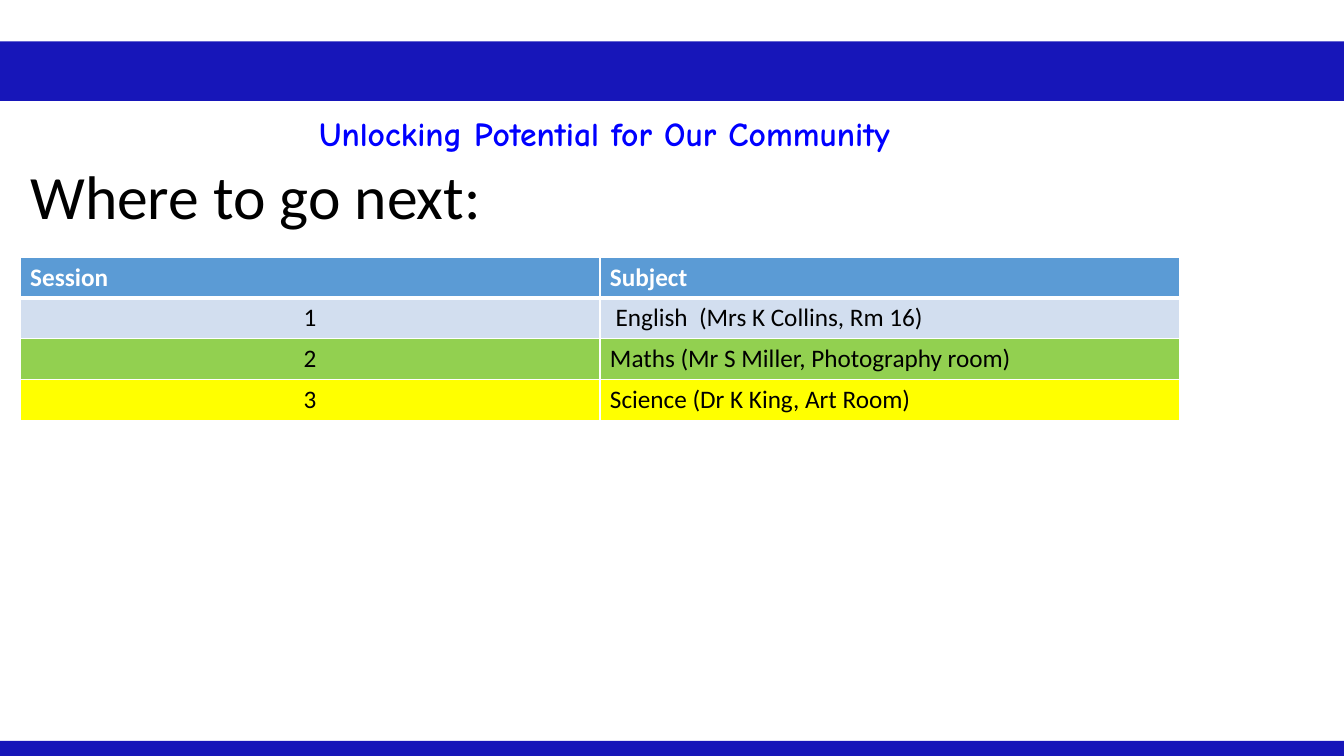
from dataclasses import dataclass

import pptx
import pptx.dml.color
import pptx.enum.shapes
import pptx.enum.text
import pptx.oxml
import pptx.oxml.ns
import pptx.util

Inches = pptx.util.Inches
Pt = pptx.util.Pt
ALIGN = pptx.enum.text.PP_ALIGN
ANCHOR = pptx.enum.text.MSO_ANCHOR
NAVY, WHITE, BLACK = "1716B9", "FFFFFF", "000000"


@dataclass
class Band:
    left: float
    top: float
    width: float
    height: float
    fill: str


@dataclass
class Row:
    session: str
    subject: str
    fill: str
    color: str = BLACK
    head: bool = False


def paint(target, color: str) -> None:
    """Give a fill a solid colour."""
    target.solid()
    target.fore_color.rgb = pptx.dml.color.RGBColor.from_string(color)


def style(target, values: dict) -> None:
    for name, value in values.items():
        setattr(target, name, value)


def write(frame, text: str, color: str, font: dict, para: dict):
    """Fill a text frame with one formatted paragraph."""
    line = frame.paragraphs[0]
    style(line, para)
    run = line.add_run()
    run.text = text
    style(run.font, font)
    paint(run.font.fill, color)


def draw_band(slide, band: Band):
    shape = slide.shapes.add_shape(
        pptx.enum.shapes.MSO_SHAPE.RECTANGLE,
        Inches(band.left), Inches(band.top),
        Inches(band.width), Inches(band.height))
    shape.shadow.inherit = False
    shape.line.fill.background()
    paint(shape.fill, band.fill)
    return shape


def edge(cell, side: str, width: float) -> None:
    """Add a white border to one side of a cell, before its fill."""
    xml = (f'<a:{side} {pptx.oxml.ns.nsdecls("a")} w="{Pt(width)}">'
           f'<a:solidFill><a:srgbClr val="{WHITE}"/></a:solidFill></a:{side}>')
    cell._tc.get_or_add_tcPr().append(pptx.oxml.parse_xml(xml))


def draw_table(slide, rows: list[Row]) -> None:
    high = 0.405
    table = slide.shapes.add_table(
        len(rows), 2, Inches(0.2), Inches(2.55),
        Inches(11.5), Inches(high * len(rows))).table
    for index, row in enumerate(rows):
        table.rows[index].height = Inches(high)
        above = 3 if index == 1 else 1
        below = 3 if row.head else 1
        for col, text in enumerate((row.session, row.subject)):
            cell = table.cell(index, col)
            for side, width in (("lnL", 1), ("lnR", 1),
                                ("lnT", above), ("lnB", below)):
                edge(cell, side, width)
            paint(cell.fill, row.fill)
            middle = col == 0 and not row.head
            write(cell.text_frame, text, row.color,
                  {"name": "Calibri", "size": Pt(18), "bold": row.head},
                  {"alignment": ALIGN.CENTER if middle else ALIGN.LEFT})


def main() -> None:
    deck = pptx.Presentation()
    style(deck, {"slide_width": Inches(13.33), "slide_height": Inches(7.5)})
    slide = deck.slides.add_slide(deck.slide_layouts[5])
    paint(slide.background.fill, WHITE)

    # Bars at top and bottom
    for top, height in ((0.41, 0.59), (7.35, 0.22)):
        draw_band(slide, Band(-0.01, top, 13.35, height, NAVY))

    # Motto
    motto = draw_band(slide, Band(2.96, 1.01, 6.07, 0.43, WHITE)).text_frame
    style(motto, {"word_wrap": True, "vertical_anchor": ANCHOR.TOP})
    write(motto, "Unlocking Potential for Our Community", "0000FF",
          {"name": "Comic Neue", "size": Pt(24), "bold": True},
          {"alignment": ALIGN.CENTER, "line_spacing": 1.15,
           "space_after": Pt(10)})

    # Title
    title = slide.shapes.title
    style(title, {"left": Inches(0.2), "top": Inches(1.56),
                  "width": Inches(11.5), "height": Inches(0.83)})
    style(title.text_frame, {
        "word_wrap": True, "vertical_anchor": ANCHOR.MIDDLE,
        "auto_size": pptx.enum.text.MSO_AUTO_SIZE.NONE})
    write(title.text_frame, "Where to go next:", BLACK,
          {"name": "Calibri", "size": Pt(44)},
          {"alignment": ALIGN.LEFT, "line_spacing": 0.9})

    # Sessions
    draw_table(slide, [
        Row("Session", "Subject", "5B9BD5", WHITE, True),
        Row("1", " English  (Mrs K Collins, Rm 16)", "D2DEEF"),
        Row("2", "Maths (Mr S Miller, Photography room)", "92D050"),
        Row("3", "Science (Dr K King, Art Room)", "FFFF00"),
    ])
    deck.save("out.pptx")


if __name__ == "__main__":
    main()
